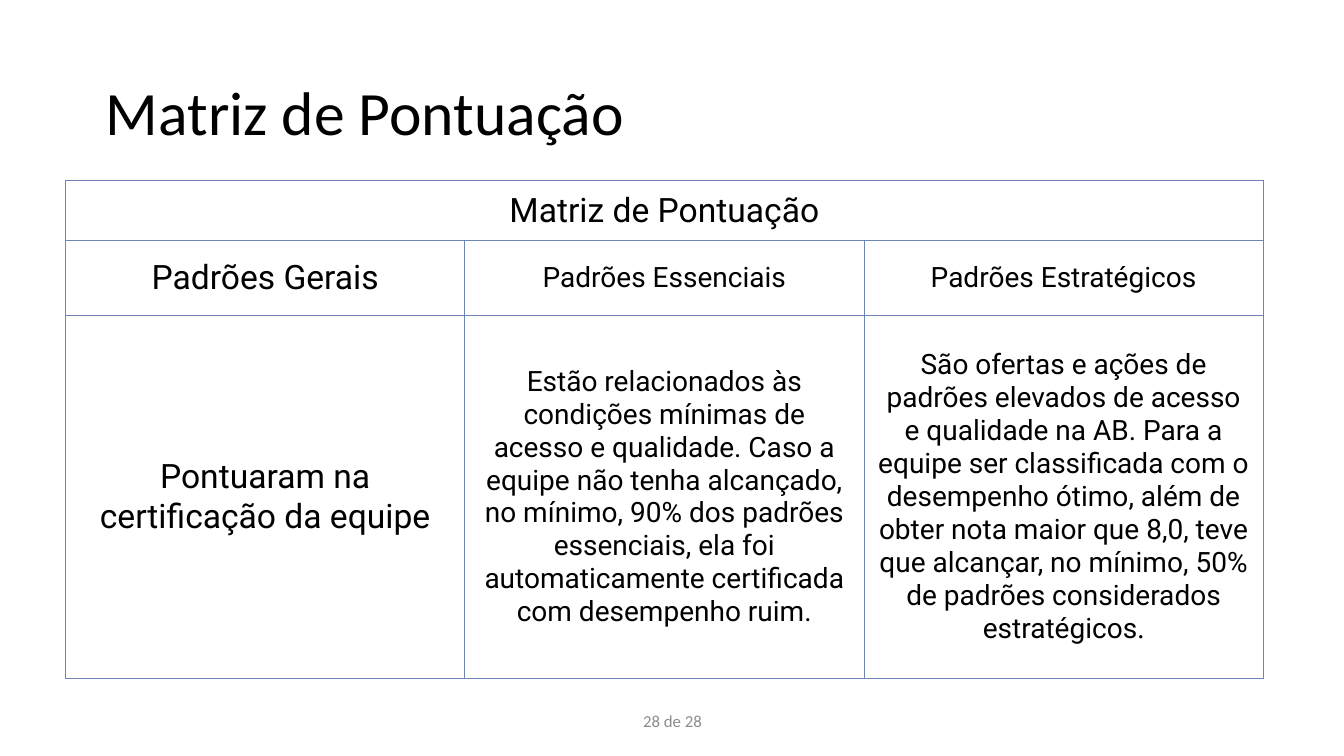
from lxml import etree
from pptx import Presentation
from pptx.dml.color import RGBColor
from pptx.enum.text import MSO_ANCHOR, PP_ALIGN
from pptx.oxml.ns import qn
from pptx.util import Inches, Pt

CENTER, LEFT = PP_ALIGN.CENTER, PP_ALIGN.LEFT
MIDDLE, BOTTOM = MSO_ANCHOR.MIDDLE, MSO_ANCHOR.BOTTOM
BLACK = RGBColor(0x00, 0x00, 0x00)
WHITE = RGBColor(0xFF, 0xFF, 0xFF)
GRAY = RGBColor(0x8C, 0x8C, 0x8C)
BORDER = RGBColor(0x6E, 0x86, 0xB6)

HEADING = "Matriz de Pontuação"
ROWS = [
    [(HEADING, 24)],
    [("Padrões Gerais", 24), ("Padrões Essenciais", 20), ("Padrões Estratégicos", 20)],
    [
        ("Pontuaram na certificação da equipe", 24),
        ("Estão relacionados às condições mínimas de acesso e qualidade. "
         "Caso a equipe não tenha alcançado, no mínimo, 90% dos padrões essenciais, "
         "ela foi automaticamente certificada com desempenho ruim.", 20),
        ("São ofertas e ações de padrões elevados de acesso e qualidade na AB. "
         "Para a equipe ser classificada com o desempenho ótimo, além de obter nota "
         "maior que 8,0, teve que alcançar, no mínimo, 50% de padrões considerados "
         "estratégicos", 20),
    ],
]


class SlideBuilder:
    title_font = "Calibri"
    table_font = "Roboto"

    def __init__(self, prs):
        self.s = prs.slides.add_slide(prs.slide_layouts[5])

    def format_run(self, r, size, font, color):
        r.font.size = Pt(size)
        r.font.name = font
        r.font.color.rgb = color

    def set_text(self, tf, text, size, font, color, align):
        tf.text = text
        p = tf.paragraphs[0]
        p.alignment = align
        self.format_run(p.runs[0], size, font, color)
        return p

    def title(self, text, left, top, width, height):
        sp = self.s.shapes.title
        sp.left, sp.top = Inches(left), Inches(top)
        sp.width, sp.height = Inches(width), Inches(height)
        tf = sp.text_frame
        tf.vertical_anchor = BOTTOM
        tf.margin_left = tf.margin_right = Inches(0.13)
        tf.margin_top = tf.margin_bottom = Inches(0.13)
        p = self.set_text(tf, text, 44, self.title_font, BLACK, LEFT)
        p.line_spacing = 0.9

    def footer(self, text, left, top, width, height):
        sp = self.s.shapes.add_textbox(Inches(left), Inches(top), Inches(width), Inches(height))
        tf = sp.text_frame
        tf.word_wrap = True
        tf.vertical_anchor = MIDDLE
        self.set_text(tf, text, 12, self.title_font, GRAY, CENTER)

    def borders(self, cell):
        tc_pr = cell._tc.get_or_add_tcPr()
        for side in ("a:lnL", "a:lnR", "a:lnT", "a:lnB"):
            ln = etree.SubElement(tc_pr, qn(side), w=str(Pt(0.75)))
            fill = etree.SubElement(ln, qn("a:solidFill"))
            etree.SubElement(fill, qn("a:srgbClr"), val=str(BORDER))

    def table(self, rows, left, top, col_width, heights):
        cols = max(len(row) for row in rows)
        table = self.s.shapes.add_table(
            len(rows), cols, Inches(left), Inches(top),
            Inches(col_width * cols), Inches(sum(heights))).table
        table.first_row = table.horz_banding = False
        for col in table.columns:
            col.width = Inches(col_width)
        for row, height in zip(table.rows, heights):
            row.height = Inches(height)
        for cell in table.iter_cells():
            self.borders(cell)
            cell.fill.solid()
            cell.fill.fore_color.rgb = WHITE
            cell.vertical_anchor = MIDDLE
            cell.margin_left = cell.margin_right = Inches(0.13)
            cell.margin_top = cell.margin_bottom = Inches(0.1)
        table.cell(0, 0).merge(table.cell(0, cols - 1))
        for i, row in enumerate(rows):
            for j, (text, size) in enumerate(row):
                self.set_text(table.cell(i, j).text_frame, text, size, self.table_font, BLACK, CENTER)
        return table


def main():
    prs = Presentation()
    prs.slide_width, prs.slide_height = Inches(13.33), Inches(7.5)
    slide = SlideBuilder(prs)
    slide.title(HEADING, 0.92, 0.55, 11.33, 1.06)
    table = slide.table(ROWS, 0.65, 1.79, 3.96, [0.6, 0.74, 3.6])
    full_stop = table.cell(2, 2).text_frame.paragraphs[0].add_run()
    full_stop.text = "."
    slide.format_run(full_stop, 20, "Times New Roman", BLACK)
    slide.footer("28 de 28", 4.42, 6.95, 4.5, 0.4)
    prs.save("out.pptx")


if __name__ == "__main__":
    main()
